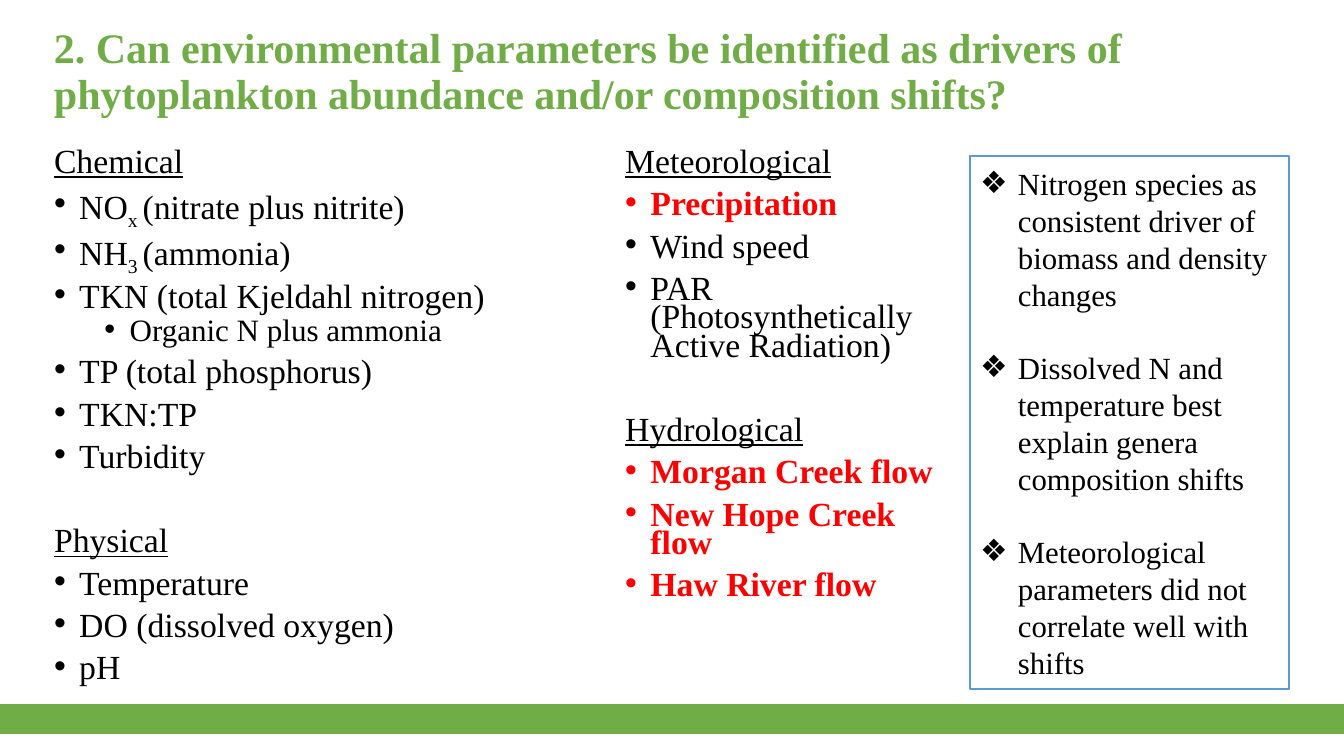
from dataclasses import dataclass

from lxml.etree import SubElement
from pptx import Presentation
from pptx.dml.color import RGBColor
from pptx.enum.shapes import MSO_SHAPE
from pptx.enum.text import MSO_ANCHOR, PP_ALIGN
from pptx.oxml.ns import qn
from pptx.util import Emu, Pt

EMU_PER_PX = 9525
FONT = "Times New Roman"
COLORS = {"green": "70AD47", "blue": "5B9BD5", "black": "000000", "red": "FF0000"}
SECTION_GAP = 40
FINDING_GAP = 26


@dataclass(frozen=True)
class Area:
    left: int
    top: int
    width: int
    height: int


@dataclass(frozen=True)
class Item:
    text: str
    subscript: str = ""
    rest: str = ""
    color: str = "black"
    level: int = 0


@dataclass(frozen=True)
class Section:
    heading: str
    items: tuple[Item, ...]


@dataclass(frozen=True)
class Column:
    area: Area
    sections: tuple[Section, ...]


COLUMNS = (
    Column(Area(42, 139, 544, 532), (
        Section("Chemical", (
            Item("NO", "x ", "(nitrate plus nitrite)"),
            Item("NH", "3 ", "(ammonia)"),
            Item("TKN (total Kjeldahl nitrogen)"),
            Item("Organic N plus ammonia", level=1),
            Item("TP (total phosphorus)"),
            Item("TKN:TP"),
            Item("Turbidity"),
        )),
        Section("Physical", (
            Item("Temperature"),
            Item("DO (dissolved oxygen)"),
            Item("pH"),
        )),
    )),
    Column(Area(586, 139, 339, 457), (
        Section("Meteorological", (
            Item("Precipitation", color="red"),
            Item("Wind speed"),
            Item("PAR (Photosynthetically Active Radiation)"),
        )),
        Section("Hydrological", (
            Item("Morgan Creek flow", color="red"),
            Item("New Hope Creek flow", color="red"),
            Item("Haw River flow", color="red"),
        )),
    )),
)

FINDINGS = (
    "Nitrogen species as consistent driver of biomass and density changes",
    "Dissolved N and temperature best explain genera composition shifts",
    "Meteorological parameters did not correlate well with shifts",
)


def px(value: int) -> Emu:
    return Emu(value * EMU_PER_PX)


def place(area: Area) -> tuple[Emu, ...]:
    return px(area.left), px(area.top), px(area.width), px(area.height)


def add_text(para, text: str, *, size: float, color: str = "black", bold: bool = False,
             underline: bool = False, subscript: bool = False) -> None:
    span = para.add_run()
    span.text = text
    span.font.name = FONT
    span.font.size = Pt(size)
    span.font.bold = bold
    span.font.underline = underline
    span.font.color.rgb = RGBColor.from_string(COLORS[color])
    if subscript:
        span.font._element.set("baseline", "-25000")


def add_bullet(para, symbol: str, margin: int, hanging: int) -> None:
    properties = para._p.get_or_add_pPr()
    properties.set("marL", str(px(margin)))
    properties.set("indent", str(px(-hanging)))
    SubElement(properties, qn("a:buFont"), typeface="Arial")
    SubElement(properties, qn("a:buChar"), char=symbol)


def next_paragraph(frame, gap: float, line_spacing: float = 1.0):
    is_first = not frame.paragraphs[0].runs
    para = frame.paragraphs[0] if is_first else frame.add_paragraph()
    para.alignment = PP_ALIGN.LEFT
    para.line_spacing = line_spacing
    if not is_first:
        para.space_before = Pt(gap)
    return para


def add_text_box(page, area: Area, anchor: MSO_ANCHOR):
    frame = page.shapes.add_textbox(*place(area)).text_frame
    frame.word_wrap = True
    frame.vertical_anchor = anchor
    return frame


def add_rectangle(page, area: Area, line: str, line_width: float, fill: str = ""):
    box = page.shapes.add_shape(MSO_SHAPE.RECTANGLE, *place(area))
    box.shadow.inherit = False
    box.line.color.rgb = RGBColor.from_string(COLORS[line])
    box.line.width = Pt(line_width)
    if fill:
        box.fill.solid()
        box.fill.fore_color.rgb = RGBColor.from_string(COLORS[fill])
    else:
        box.fill.background()
    return box


def add_column(page, column: Column) -> None:
    frame = add_text_box(page, column.area, MSO_ANCHOR.TOP)
    for section in column.sections:
        heading = next_paragraph(frame, SECTION_GAP, 0.7)
        add_text(heading, section.heading, size=24.1, underline=True)
        for item in section.items:
            para = next_paragraph(frame, 5 if item.level else 10, 0.7)
            para.level = item.level
            add_bullet(para, "•", 24 + 48 * item.level, 24)
            size = 22.2 if item.level else 24.1
            add_text(para, item.text, size=size, color=item.color, bold=item.color == "red")
            if item.subscript:
                add_text(para, item.subscript, size=size, subscript=True)
                add_text(para, item.rest, size=size)


def add_title(page) -> None:
    frame = add_text_box(page, Area(42, 0, 1104, 139), MSO_ANCHOR.MIDDLE)
    add_text(
        next_paragraph(frame, 0, 0.9),
        "2. Can environmental parameters be identified as drivers of "
        "phytoplankton abundance and/or composition shifts?",
        size=30, color="green", bold=True,
    )


def add_findings(page) -> None:
    frame = add_rectangle(page, Area(924, 149, 304, 507), "blue", 1.5).text_frame
    frame.word_wrap = True
    frame.vertical_anchor = MSO_ANCHOR.MIDDLE
    for finding in FINDINGS:
        para = next_paragraph(frame, FINDING_GAP)
        add_bullet(para, "❖", 36, 36)
        add_text(para, finding, size=22)


def main() -> None:
    deck = Presentation()
    deck.slide_width, deck.slide_height = px(1280), px(720)
    page = deck.slides.add_slide(deck.slide_layouts[6])
    for column in COLUMNS:
        add_column(page, column)
    add_rectangle(page, Area(0, 671, 1280, 27), "green", 1, "green")
    add_title(page)
    add_findings(page)
    deck.save("out.pptx")


if __name__ == "__main__":
    main()
